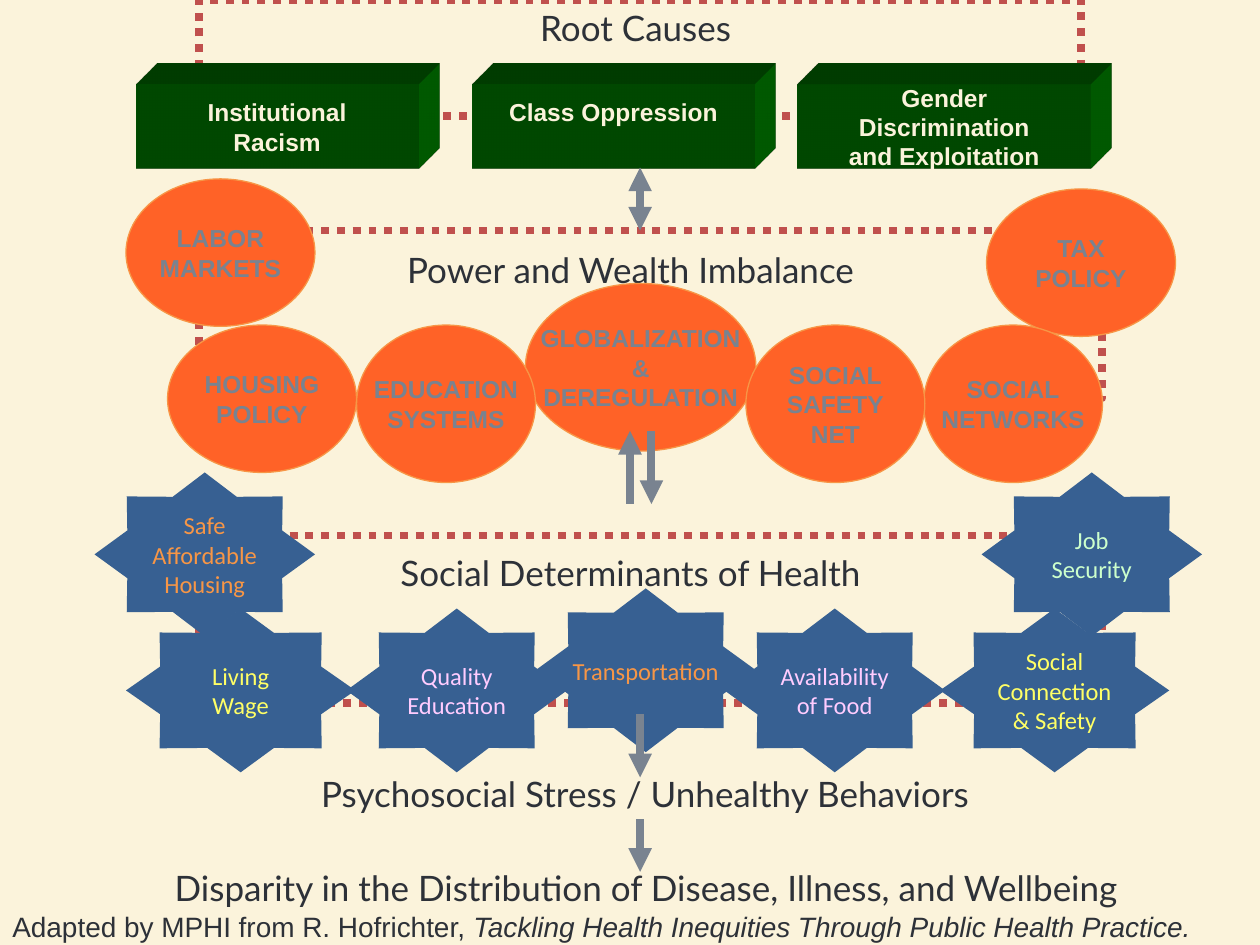
from typing import NamedTuple

from lxml.etree import SubElement, fromstring
from pptx import Presentation
from pptx.dml.color import RGBColor
from pptx.enum.dml import MSO_LINE
from pptx.enum.shapes import MSO_CONNECTOR, MSO_SHAPE
from pptx.enum.text import MSO_ANCHOR, MSO_AUTO_SIZE, PP_ALIGN
from pptx.oxml.ns import qn
from pptx.util import Inches, Pt

CREAM, INK, GRAY = "FBF3DB", "2D3138", "798390"
GREEN, ORANGE, BLUE, RED = "006600", "FF6227", "376092", "C0504D"
AMBER, YELLOW, PINK, MINT = "F79646", "FFFF66", "FFCCFF", "CCFFCC"
DRAWING_NS = "http://schemas.openxmlformats.org/drawingml/2006/main"


class Box(NamedTuple):
    left: float
    top: float
    width: float
    height: float


class Item(NamedTuple):
    text: str
    box: Box
    color: str = GRAY


class Arrow(NamedTuple):
    x: float
    start: float
    end: float
    both: bool = False


FRAMES = [Box(1.58, 0, 7, 0.92), Box(1.58, 1.83, 7.17, 1.33), Box(1.58, 4.25, 7.17, 1.33)]

HEADINGS = [
    Item("Root Causes", Box(3.17, 0, 3.75, 0.43)),
    Item("Power and Wealth Imbalance", Box(2.42, 1.92, 5.17, 0.43)),
    Item("Social Determinants of Health", Box(2.42, 4.33, 5.17, 0.43)),
    Item("Psychosocial Stress / Unhealthy Behaviors", Box(1.58, 6.08, 7.08, 0.43)),
    Item("Disparity in the Distribution of Disease, Illness, and Wellbeing",
         Box(0.42, 6.83, 9.42, 0.43)),
]

CAUSES = [
    Item("Institutional\nRacism", Box(1.08, 0.67, 2.24, 0.67)),
    Item("Class Oppression", Box(3.75, 0.67, 2.24, 0.67)),
    Item("Gender\nDiscrimination\nand Exploitation", Box(6.33, 0.67, 2.33, 0.67)),
]

POLICIES = [
    Item("LABOR\nMARKETS", Box(1, 1.42, 1.5, 1.17)),
    Item("GLOBALIZATION\n&\nDEREGULATION", Box(4.17, 2.25, 1.83, 1.33)),
    Item("HOUSING\nPOLICY", Box(1.33, 2.58, 1.5, 1.17)),
    Item("EDUCATION\nSYSTEMS", Box(2.83, 2.58, 1.42, 1.25)),
    Item("TAX\nPOLICY", Box(7.83, 1.5, 1.5, 1.17)),
    Item("SOCIAL\nNETWORKS", Box(7.33, 2.58, 1.42, 1.25)),
    Item("SOCIAL\nSAFETY\nNET", Box(5.92, 2.58, 1.42, 1.25)),
]

DETERMINANTS = [
    Item("Safe\nAffordable\nHousing", Box(0.75, 3.75, 1.75, 1.3), AMBER),
    Item("Social\nConnection\n& Safety", Box(7.46, 4.83, 1.82, 1.3), YELLOW),
    Item("Quality\nEducation", Box(2.75, 4.83, 1.75, 1.3), PINK),
    Item("Job\nSecurity", Box(7.79, 3.75, 1.75, 1.3), MINT),
    Item("Living\nWage", Box(1, 4.83, 1.82, 1.3), YELLOW),
    Item("Transportation", Box(4.25, 4.67, 1.75, 1.3), AMBER),
    Item("Availability\nof Food", Box(5.75, 4.83, 1.75, 1.3), PINK),
]

# Each arrow points at its start.
ARROWS = [
    Arrow(5.08, 1.33, 1.83, both=True),
    Arrow(5, 3.42, 4),
    Arrow(5.17, 4, 3.42),
    Arrow(5.08, 6.17, 5.67),
    Arrow(5.08, 6.92, 6.5),
]


def rgb(color: str) -> RGBColor:
    return RGBColor.from_string(color)


def place(box: Box) -> list:
    return [Inches(v) for v in box]


def add_run(p, text: str, *, size: float, font: str, color: str,
            bold: bool = False, italic: bool = False) -> None:
    r = p.add_run()
    r.text = text
    r.font.size, r.font.name = Pt(size), font
    r.font.bold, r.font.italic = bold, italic
    r.font.color.rgb = rgb(color)


def write(tf, text: str, *, align=PP_ALIGN.CENTER, **style) -> None:
    """Write one paragraph for each line of text."""
    for i, line in enumerate(text.split("\n")):
        p = tf.add_paragraph() if i else tf.paragraphs[0]
        p.alignment = align
        add_run(p, line, **style)


def add_shape(s, kind, box: Box, fill: str = "", line: str = "", width: float = 0.75):
    sp = s.shapes.add_shape(kind, *place(box))
    sp.shadow.inherit = False
    if fill:
        sp.fill.solid()
        sp.fill.fore_color.rgb = rgb(fill)
    else:
        sp.fill.background()
    if line:
        sp.line.color.rgb = rgb(line)
        sp.line.width = Pt(width)
    else:
        sp.line.fill.background()
    return sp


def add_labelled(s, kind, item: Item, fill: str, line: str = "", **style):
    sp = add_shape(s, kind, item.box, fill, line)
    tf = sp.text_frame
    tf.word_wrap = False
    tf.vertical_anchor = MSO_ANCHOR.MIDDLE
    write(tf, item.text, size=14, **style)
    return sp


def add_text_box(s, box: Box):
    tf = s.shapes.add_textbox(*place(box)).text_frame
    tf.word_wrap = True
    tf.auto_size = MSO_AUTO_SIZE.SHAPE_TO_FIT_TEXT
    return tf


def extrude(sp, color: str) -> None:
    """Give a shape depth towards its top right."""
    for xml in (
        '<a:scene3d xmlns:a="{ns}"><a:camera prst="legacyObliqueTopRight"/>'
        '<a:lightRig rig="legacyFlat3" dir="b"/></a:scene3d>',
        '<a:sp3d xmlns:a="{ns}" extrusionH="430200" prstMaterial="legacyMatte">'
        '<a:bevelT w="13500" h="13500" prst="angle"/>'
        '<a:bevelB w="13500" h="13500" prst="angle"/>'
        '<a:extrusionClr><a:srgbClr val="{color}"/></a:extrusionClr></a:sp3d>',
    ):
        sp.element.spPr.append(fromstring(xml.format(ns=DRAWING_NS, color=color)))


def add_arrow(s, arrow: Arrow) -> None:
    x = Inches(arrow.x)
    c = s.shapes.add_connector(MSO_CONNECTOR.STRAIGHT, x, Inches(arrow.start),
                               x, Inches(arrow.end))
    c.line.color.rgb = rgb(GRAY)
    c.line.width = Pt(4.5)
    sp_pr = c.element.spPr
    ln = sp_pr.find(qn("a:ln"))
    for tag in ("a:headEnd", "a:tailEnd") if arrow.both else ("a:headEnd",):
        SubElement(ln, qn(tag), type="triangle")
    SubElement(sp_pr, qn("a:effectLst"))


def main() -> None:
    prs = Presentation()
    prs.slide_width, prs.slide_height = Inches(10), Inches(7.5)
    s = prs.slides.add_slide(prs.slide_layouts[6])
    s.background.fill.solid()
    s.background.fill.fore_color.rgb = rgb(CREAM)

    for box in FRAMES:
        frame = add_shape(s, MSO_SHAPE.RECTANGLE, box, line=RED, width=4.5)
        frame.line.dash_style = MSO_LINE.ROUND_DOT
    for item in HEADINGS:
        write(add_text_box(s, item.box), item.text, size=20, font="Lato", color=INK)
    for item in CAUSES:
        sp = add_labelled(s, MSO_SHAPE.RECTANGLE, item, GREEN,
                          font="Arial", color=CREAM, bold=True)
        extrude(sp, GREEN)
        if "\n" not in item.text:
            sp.text_frame.margin_bottom = Inches(0.28)
    for item in POLICIES:
        add_labelled(s, MSO_SHAPE.OVAL, item, ORANGE, AMBER,
                     font="Arial", color=item.color, bold=True)
    for item in DETERMINANTS:
        star = add_labelled(s, MSO_SHAPE.STAR_8_POINT, item, BLUE,
                            font="Calibri", color=item.color)
        star.adjustments[0] = 0.38
    for arrow in ARROWS:
        add_arrow(s, arrow)

    tf = add_text_box(s, Box(0, 7.17, 10, 0.37))
    source = dict(size=16, font="Arial", color=INK)
    write(tf, "Adapted by MPHI from R. Hofrichter, ", align=PP_ALIGN.LEFT, **source)
    add_run(tf.paragraphs[0], "Tackling Health Inequities Through Public Health Practice.",
            italic=True, **source)
    prs.save("out.pptx")


if __name__ == "__main__":
    main()
